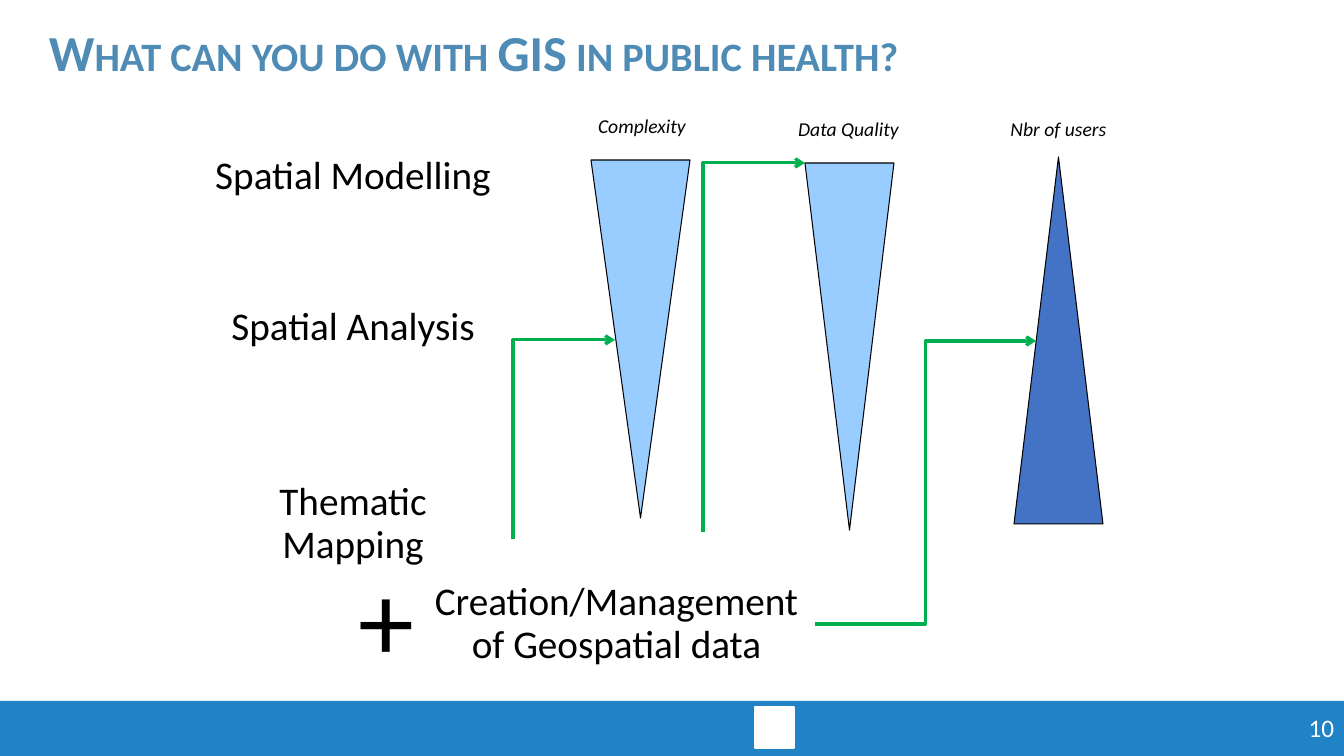
from dataclasses import dataclass

from lxml.etree import SubElement
from pptx import Presentation
from pptx.dml.color import RGBColor
from pptx.enum.shapes import MSO_CONNECTOR as Connector, MSO_SHAPE as Preset
from pptx.enum.text import MSO_ANCHOR as Anchor, PP_ALIGN as Align
from pptx.oxml.ns import qn
from pptx.slide import Slide
from pptx.util import Emu, Pt

SLIDE_WIDTH, SLIDE_HEIGHT = 1344, 756
EMU_PER_PX = 12192000 / SLIDE_WIDTH


@dataclass(frozen=True)
class Theme:
    font: str = "Calibri"
    text: str = "000000"
    title: str = "4F8CB5"
    white: str = "FFFFFF"
    footer: str = "1F83C5"
    light_wedge: str = "99CCFF"
    dark_wedge: str = "4472C4"
    arrow: str = "00B050"
    title_size: int = 36
    activity_size: int = 28
    plus_size: int = 80
    caption_size: int = 14
    number_size: int = 18


THEME = Theme()


@dataclass(frozen=True)
class Box:
    left: int
    top: int
    width: int
    height: int


@dataclass(frozen=True)
class Label:
    text: str
    box: Box
    size: int
    color: str = THEME.text
    align: Align = Align.CENTER
    anchor: Anchor = Anchor.TOP
    spacing: float = 0.9
    indent: int = 0
    wrap: bool = True
    bold: bool = False
    italic: bool = False
    small_caps: bool = False


@dataclass(frozen=True)
class Solid:
    preset: Preset
    box: Box
    fill: str
    line: str | None = None
    line_width: float = 0.75
    rotation: int = 0


@dataclass(frozen=True)
class Arrow:
    start: tuple[int, int]
    end: tuple[int, int]
    bend: int = 0


def caption(text: str, box: Box, wrap: bool = True) -> Label:
    return Label(text, box, THEME.caption_size, anchor=Anchor.MIDDLE,
                 spacing=1.0, wrap=wrap, italic=True)


def activity(text: str, box: Box) -> Label:
    return Label(text, box, THEME.activity_size)


def wedge(box: Box, fill: str, rotation: int = 0) -> Solid:
    return Solid(Preset.ISOSCELES_TRIANGLE, box, fill, THEME.text,
                 rotation=rotation)


SOLIDS = [
    Solid(Preset.RECTANGLE, Box(0, 701, SLIDE_WIDTH, 55), THEME.footer),
    Solid(Preset.RECTANGLE, Box(755, 707, 39, 41), THEME.white, THEME.white, 1),
    wedge(Box(805, 163, 89, 367), THEME.light_wedge, 180),
    wedge(Box(1014, 157, 89, 367), THEME.dark_wedge),
    wedge(Box(591, 160, 99, 358), THEME.light_wedge, 180),
]

ARROWS = [
    Arrow((513, 539), (615, 340)),
    Arrow((703, 532), (805, 163)),
    Arrow((815, 624), (1036, 341), 50000),
]

LABELS = [
    caption("Data Quality", Box(756, 112, 185, 34)),
    caption("Nbr of users", Box(966, 112, 185, 34)),
    caption("Complexity", Box(587, 109, 110, 34), wrap=False),
    activity("Creation/Management of Geospatial data", Box(418, 577, 397, 95)),
    Label("+", Box(347, 560, 79, 132), THEME.plus_size),
    activity("Thematic Mapping", Box(202, 477, 302, 94)),
    activity("Spatial Analysis", Box(202, 302, 302, 53)),
    activity("Spatial Modelling", Box(202, 151, 302, 53)),
    Label("10", Box(1042, 707, 302, 41), THEME.number_size, THEME.white,
          Align.RIGHT, spacing=1.0),
    Label("What can you do with GIS in public health?",
          Box(0, 17, SLIDE_WIDTH, 76), THEME.title_size, THEME.title,
          Align.LEFT, Anchor.MIDDLE, indent=39, bold=True, small_caps=True),
]


def px(length: int) -> Emu:
    return Emu(round(length * EMU_PER_PX))


def place(box: Box) -> tuple[Emu, Emu, Emu, Emu]:
    return px(box.left), px(box.top), px(box.width), px(box.height)


def rgb(color: str) -> RGBColor:
    return RGBColor.from_string(color)


def draw_solid(slide: Slide, solid: Solid) -> None:
    shape = slide.shapes.add_shape(solid.preset, *place(solid.box))
    shape.shadow.inherit = False
    shape.rotation = solid.rotation
    shape.fill.solid()
    shape.fill.fore_color.rgb = rgb(solid.fill)
    if solid.line is None:
        shape.line.fill.background()
    else:
        shape.line.color.rgb = rgb(solid.line)
        shape.line.width = Pt(solid.line_width)


def draw_arrow(slide: Slide, arrow: Arrow) -> None:
    ends = [px(value) for value in (*arrow.start, *arrow.end)]
    elbow = slide.shapes.add_connector(Connector.ELBOW, *ends)
    elbow.line.color.rgb = rgb(THEME.arrow)
    elbow.line.width = Pt(2.25)
    properties = elbow._element.spPr
    SubElement(properties.find(qn("a:ln")), qn("a:tailEnd"), type="arrow")
    SubElement(properties, qn("a:effectLst"))
    adjustments = properties.find(qn("a:prstGeom")).find(qn("a:avLst"))
    SubElement(adjustments, qn("a:gd"), name="adj1", fmla=f"val {arrow.bend}")


def draw_label(slide: Slide, label: Label) -> None:
    frame = slide.shapes.add_textbox(*place(label.box)).text_frame
    frame.word_wrap = label.wrap
    frame.vertical_anchor = label.anchor
    paragraph = frame.paragraphs[0]
    paragraph.alignment = label.align
    paragraph.line_spacing = label.spacing
    if label.indent:
        paragraph._p.get_or_add_pPr().set("marL", str(px(label.indent)))
    font = paragraph.font
    font.name = THEME.font
    font.size = Pt(label.size)
    font.color.rgb = rgb(label.color)
    font.bold = label.bold
    font.italic = label.italic
    run = paragraph.add_run()
    run.text = label.text
    if label.small_caps:
        run._r.get_or_add_rPr().set("cap", "small")


def main() -> None:
    deck = Presentation()
    deck.slide_width, deck.slide_height = px(SLIDE_WIDTH), px(SLIDE_HEIGHT)
    slide = deck.slides.add_slide(deck.slide_layouts[6])
    for solid in SOLIDS:
        draw_solid(slide, solid)
    for arrow in ARROWS:
        draw_arrow(slide, arrow)
    for label in LABELS:
        draw_label(slide, label)
    deck.save("out.pptx")


if __name__ == "__main__":
    main()
